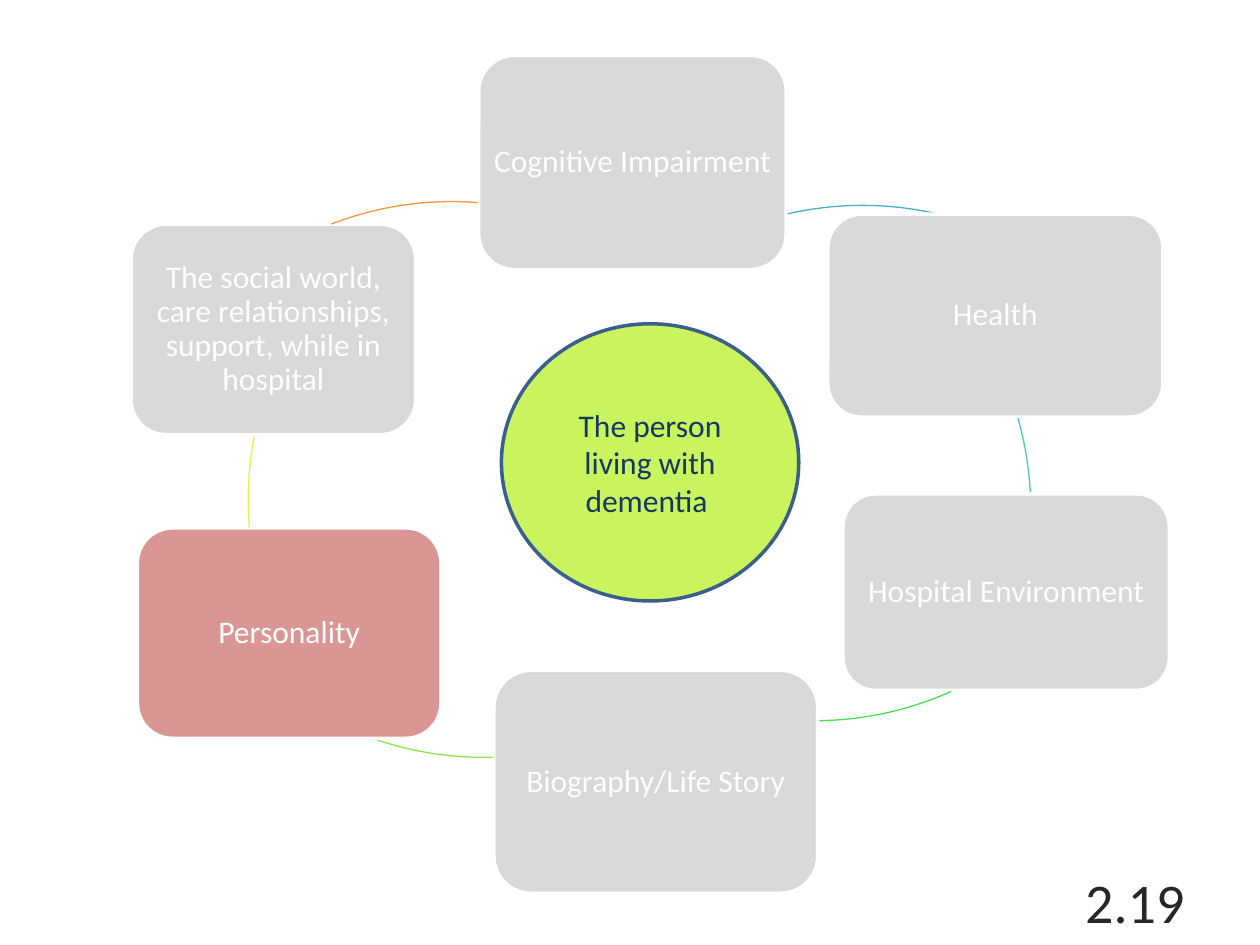
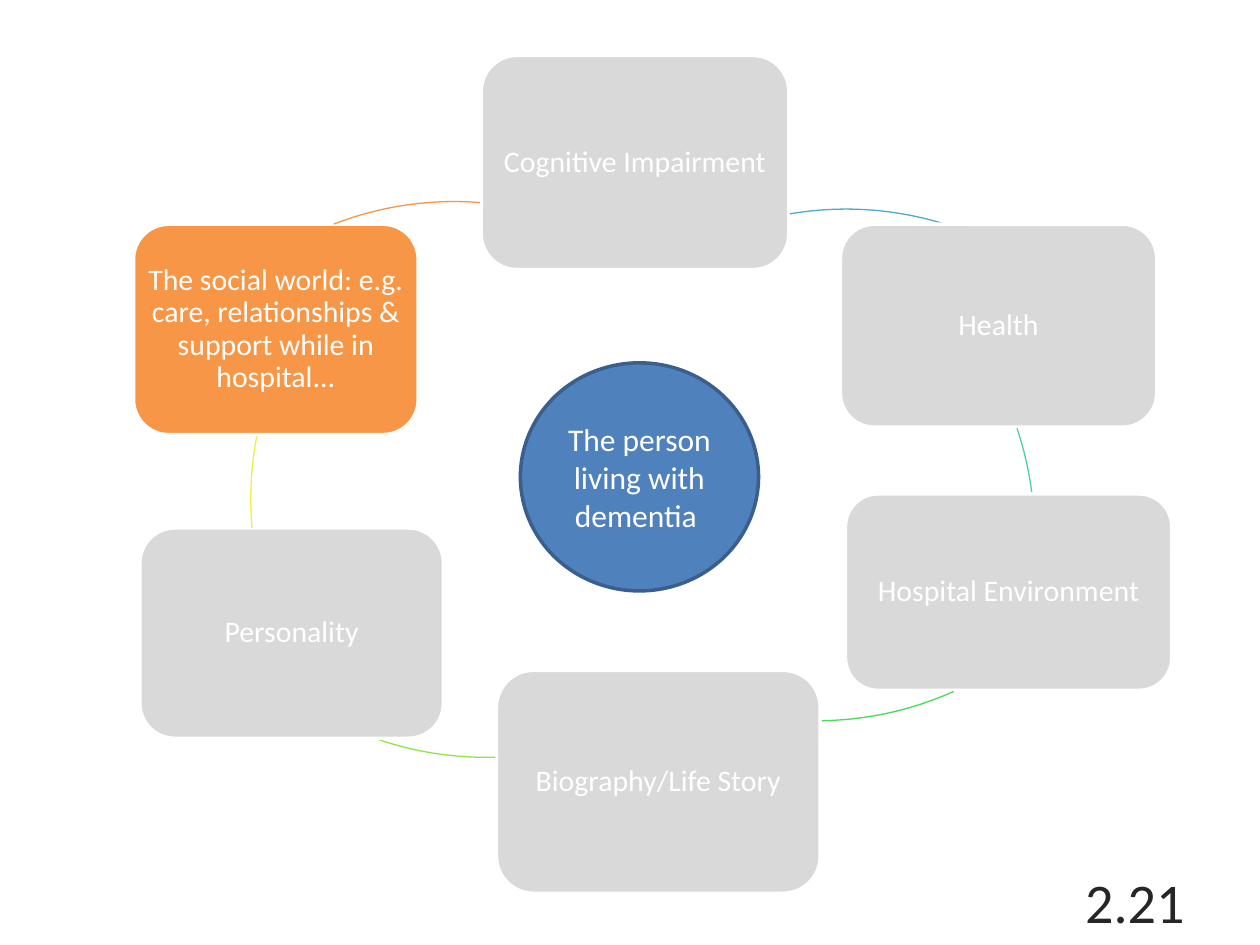
import math
from dataclasses import dataclass

import pptx
import pptx.util
import pptx.dml.color
import pptx.enum.shapes
import pptx.enum.text

Inches = pptx.util.Inches
Kind = pptx.enum.shapes.MSO_SHAPE
Align = pptx.enum.text.PP_ALIGN


@dataclass(frozen=True)
class Theme:
    font: str = "Calibri"
    white: str = "FFFFFF"
    grey: str = "D9D9D9"
    rose: str = "D99694"
    orange: str = "F79646"
    lime: str = "C9F45E"
    blue: str = "4F81BD"
    navy: str = "17375E"
    edge: str = "3A5F8C"
    dark: str = "262626"
    body: int = 18
    small: int = 17
    number: int = 32
    border: float = 2
    thin: float = 0.75


T = Theme()

# Content: factors around the ring, as left, top, width, height
FACTORS = {
    "Cognitive Impairment": (3.8, 0.44, 2.44, 1.7),
    "Health": (6.57, 1.7, 2.66, 1.61),
    "Hospital Environment": (6.69, 3.92, 2.59, 1.56),
    "Biography/Life Story": (3.92, 5.32, 2.57, 1.77),
    "Personality": (1.09, 4.19, 2.41, 1.67),
    "Social": (1.04, 1.78, 2.26, 1.67),
}

# Clockwise links: circle left and top, start point, end point, colour
RING = 5.29
LINKS = {
    "Cognitive Impairment": (4.2, 1.63, (6.25, 1.69), (7.46, 1.7), "4BACC6"),
    "Health": (2.89, 1.4, (8.07, 3.32), (8.17, 3.91), "49D1A3"),
    "Hospital Environment": (3.82, 0.43, (7.55, 5.49), (6.5, 5.72), "47DC57"),
    "Biography/Life Story": (1.19, 0.72, (3.91, 6.01), (2.99, 5.87), "8DE646"),
    "Personality": (1.97, 1.32, (1.98, 4.19), (2.02, 3.46), "EEEF46"),
    "Social": (0.94, 1.6, (2.63, 1.78), (3.79, 1.61), "F79646"),
}

CENTRE = "The person living with dementia "
NUMBER = (7.17, 6.95, 2.33, 0.4)

# Each slide: what stands out, and where its ring differs ("shift" moves the rest)
SLIDES = [
    dict(number="2.19", size=T.body, shift=0, focus="Personality", tint=T.rose,
         social="The social world, care relationships, support, while in hospital",
         core=(3.98, 2.57, 2.36, 2.2), fill=T.lime, ink=T.navy,
         factors={}, links={}),
    dict(number="2.21", size=T.small, shift=0.02, focus="Social", tint=T.orange,
         social="The social world: e.g. care, relationships & support while in hospital...",
         core=(4.13, 2.88, 1.89, 1.81), fill=T.blue, ink=T.white,
         factors={"Health": (6.67, 1.78, 2.51, 1.61)},
         links={"Cognitive Impairment": (4.07, 1.66, (6.27, 1.7), (7.51, 1.78), "4BACC6"),
                "Health": (2.92, 1.6, (8.07, 3.4), (8.19, 3.92), "49D1A3")}),
]


def rgb(code):
    return pptx.dml.color.RGBColor.from_string(code)


def write(shape, text, size=T.body, ink=T.white, align=Align.CENTER, space=None, inset=None):
    frame = shape.text_frame
    frame.word_wrap = True
    frame.vertical_anchor = pptx.enum.text.MSO_ANCHOR.MIDDLE
    if inset is not None:
        frame.margin_left = frame.margin_right = Inches(inset)
        frame.margin_top = frame.margin_bottom = Inches(inset)
    para = frame.paragraphs[0]
    para.alignment = align
    para.line_spacing = space
    run = para.add_run()
    run.text = text
    run.font.name = T.font
    run.font.size = pptx.util.Pt(size)
    run.font.color.rgb = rgb(ink)


def draw(slide, kind, box, line, width, fill=None):
    shape = slide.shapes.add_shape(kind, *map(Inches, box))
    shape.shadow.inherit = False
    if fill:
        shape.fill.solid()
        shape.fill.fore_color.rgb = rgb(fill)
    else:
        shape.fill.background()
    shape.line.color.rgb = rgb(line)
    shape.line.width = pptx.util.Pt(width)
    return shape


def link(slide, left, top, start, end, color):
    """Draw the part of a circle that runs clockwise from start to end."""
    arc = draw(slide, Kind.ARC, (left, top, RING, RING), color, T.thin)
    for i, (x, y) in enumerate((start, end)):
        turn = math.atan2(y - top - RING / 2, x - left - RING / 2)
        # Arc angles are stored in 60000ths of a degree, scaled by 100000
        arc.adjustments[i] = math.degrees(turn) % 360 * 0.6


def build(slide, data):
    shift = data["shift"]

    # Ring of factors and links
    for name, (left, *rest) in FACTORS.items():
        box = data["factors"].get(name, (left + shift, *rest))
        fill = data["tint"] if name == data["focus"] else T.grey
        card = draw(slide, Kind.ROUNDED_RECTANGLE, box, T.white, T.border, fill)
        text = data["social"] if name == "Social" else name
        write(card, text, size=data["size"], space=0.9, inset=0)

        left, top, start, end, color = LINKS[name]
        moved = [(x + shift, y) for x, y in (start, end)]
        link(slide, *data["links"].get(name, (left + shift, top, *moved, color)))

    # Person in the middle
    core = draw(slide, Kind.OVAL, data["core"], T.edge, T.border, data["fill"])
    write(core, CENTRE, ink=data["ink"])

    # Page number
    note = slide.shapes.add_textbox(*map(Inches, NUMBER))
    write(note, data["number"], size=T.number, ink=T.dark, align=Align.RIGHT)


def main():
    deck = pptx.Presentation()
    deck.slide_width, deck.slide_height = Inches(10), Inches(7.5)
    blank = deck.slide_layouts[6]
    for data in SLIDES:
        build(deck.slides.add_slide(blank), data)
    deck.save("out.pptx")


if __name__ == "__main__":
    main()
